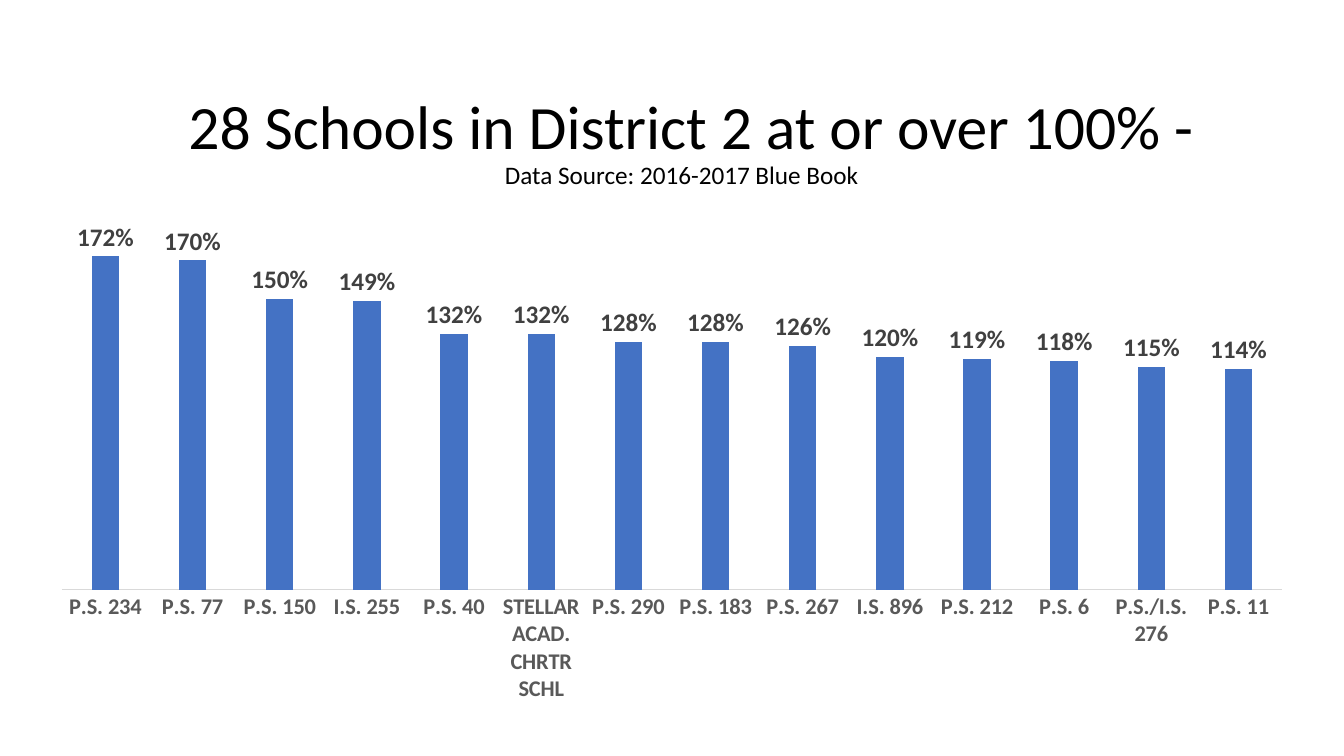
from lxml.etree import SubElement
from pptx import Presentation
from pptx.chart.data import CategoryChartData
from pptx.dml.color import RGBColor
from pptx.enum.chart import XL_CHART_TYPE, XL_LABEL_POSITION, XL_TICK_LABEL_POSITION, XL_TICK_MARK
from pptx.enum.text import MSO_ANCHOR, PP_ALIGN
from pptx.oxml.ns import qn
from pptx.util import Pt

BLACK = RGBColor(0x00, 0x00, 0x00)
BLUE = RGBColor(0x44, 0x72, 0xC4)
LABEL_GREY = RGBColor(0x40, 0x40, 0x40)
AXIS_GREY = RGBColor(0x59, 0x59, 0x59)
LINE_GREY = RGBColor(0xD9, 0xD9, 0xD9)

UTILIZATION = [
    ("P.S. 234", 1.72), ("P.S. 77", 1.70), ("P.S. 150", 1.50), ("I.S. 255", 1.49),
    ("P.S. 40", 1.32), ("STELLAR ACAD. CHRTR SCHL", 1.32), ("P.S. 290", 1.28),
    ("P.S. 183", 1.28), ("P.S. 267", 1.26), ("I.S. 896", 1.20), ("P.S. 212", 1.19),
    ("P.S. 6", 1.18), ("P.S./I.S. 276", 1.15), ("P.S. 11", 1.14),
]


class SlideBuilder:
    """Holds the style and the current slide."""

    font_name = "Calibri"

    def __init__(self, page):
        self.page = page

    def style_font(self, font, size, color, bold=False):
        font.name = self.font_name
        font.size = Pt(size)
        font.bold = bold
        font.color.rgb = color

    def add_heading(self, left, top, width, height, lines):
        box = self.page.shapes.add_textbox(Pt(left), Pt(top), Pt(width), Pt(height))
        frame = box.text_frame
        frame.word_wrap = True
        frame.vertical_anchor = MSO_ANCHOR.MIDDLE
        para = frame.paragraphs[0]
        para.alignment = PP_ALIGN.CENTER
        para.line_spacing = 0.9
        for index, (text, size) in enumerate(lines):
            if index:
                para.add_line_break()
            span = para.add_run()
            span.text = text
            self.style_font(span.font, size, BLACK)

    def add_column_chart(self, left, top, width, height, rows):
        data = CategoryChartData(number_format="0%")
        data.categories = [school for school, _ in rows]
        data.add_series("Series 1", [value for _, value in rows])
        chart = self.page.shapes.add_chart(
            XL_CHART_TYPE.COLUMN_CLUSTERED,
            Pt(left), Pt(top), Pt(width), Pt(height), data).chart
        chart.has_legend = False
        chart.has_title = False
        self.style_font(chart.font, 10, BLACK)

        # Columns and their labels
        plot = chart.plots[0]
        plot.gap_width = 219
        plot.overlap = -27
        plot.vary_by_categories = False
        series = plot.series[0]
        series.format.fill.solid()
        series.format.fill.fore_color.rgb = BLUE
        labels = series.data_labels
        labels.show_value = True
        labels.position = XL_LABEL_POSITION.OUTSIDE_END
        labels.number_format = "0%"
        labels.number_format_is_linked = False
        self.style_font(labels.font, 18, LABEL_GREY, bold=True)

        # Axes, with level school names that wrap
        schools = chart.category_axis
        schools.major_tick_mark = schools.minor_tick_mark = XL_TICK_MARK.NONE
        schools.tick_label_position = XL_TICK_LABEL_POSITION.NEXT_TO_AXIS
        schools.format.line.color.rgb = LINE_GREY
        schools.format.line.width = Pt(0.75)
        self.style_font(schools.tick_labels.font, 16, AXIS_GREY, bold=True)
        body = schools._element.find(qn("c:txPr")).find(qn("a:bodyPr"))
        body.set("rot", "0")
        body.set("vert", "horz")
        percent = chart.value_axis
        percent.minimum_scale = 0
        percent.maximum_scale = 2
        percent.has_major_gridlines = False
        percent.visible = False
        self.place_plot_area(chart, x=0.02, y=0.02, w=0.96, h=0.74)

    def place_plot_area(self, chart, **fractions):
        plot_area = chart.plots[0]._element.getparent()
        layout = plot_area.find(qn("c:layout"))
        if layout is None:
            layout = SubElement(plot_area, qn("c:layout"))
            plot_area.insert(0, layout)
        manual = SubElement(layout, qn("c:manualLayout"))
        settings = {"layoutTarget": "inner", "xMode": "edge", "yMode": "edge", **fractions}
        for name, value in settings.items():
            SubElement(manual, qn(f"c:{name}")).set("val", str(value))


def main():
    deck = Presentation()
    deck.slide_width, deck.slide_height = Pt(960), Pt(540)
    builder = SlideBuilder(deck.slides.add_slide(deck.slide_layouts[6]))

    # Heading
    builder.add_heading(75, 50, 828, 104, [
        (" 28 Schools in District 2 at or over 100% -", 44),
        ("Data Source: 2016-2017 Blue Book ", 18),
    ])

    # Utilization by school
    builder.add_column_chart(26, 137, 908, 374, UTILIZATION)
    deck.save("out.pptx")


if __name__ == "__main__":
    main()
